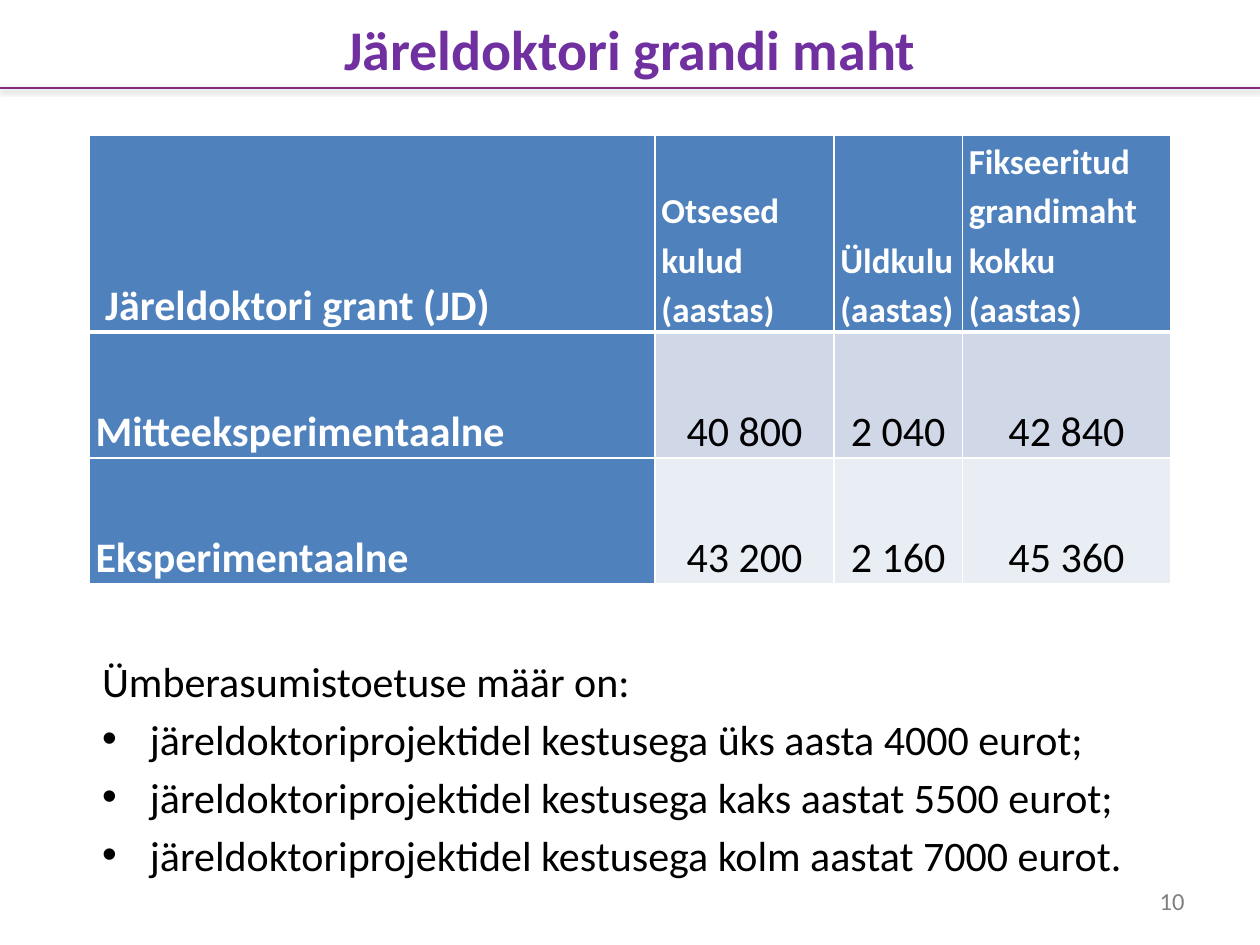
import pptx
import pptx.util
import pptx.dml.color
import pptx.enum.text
import pptx.enum.shapes
import pptx.oxml
import pptx.oxml.ns
from lxml import etree

Inches = pptx.util.Inches
Pt = pptx.util.Pt
Align = pptx.enum.text.PP_ALIGN
Anchor = pptx.enum.text.MSO_ANCHOR
qn = pptx.oxml.ns.qn

THEME = {
    "font": "Calibri",
    "title": "7030A0", "rule": "832B7C", "head": "4F81BD",
    "bands": ["D0D8E8", "E9EDF4"],
    "white": "FFFFFF", "black": "000000", "gray": "808080",
    "big": 32, "body": 24, "label": 20, "small": 14,
}

TITLE = "Järeldoktori grandi maht"
HEADS = [" Järeldoktori grant (JD)", "Otsesed kulud (aastas)",
         "Üldkulu (aastas)", "Fikseeritud grandimaht kokku (aastas)"]
ROWS = [
    ["Mitteeksperimentaalne", "40 800", "2 040", "42 840"],
    ["Eksperimentaalne", "43 200", "2 160", "45 360"],
]
WIDTHS = [4.49, 1.42, 1.02, 1.65]
HEIGHTS = [1.5, 1, 1]
LEAD = "Ümberasumistoetuse määr on:"
ITEMS = [
    "järeldoktoriprojektidel kestusega üks aasta 4000 eurot;",
    "järeldoktoriprojektidel kestusega kaks aastat 5500 eurot;",
    "järeldoktoriprojektidel kestusega kolm aastat 7000 eurot.",
]
PAGE = "10"
LEFT = 0.71
INDENT = 0.38


def color(name):
    return pptx.dml.color.RGBColor.from_string(THEME.get(name, name))


def write(para, text, size="body", ink="black", bold=False,
          align=Align.JUSTIFY, space=1.15, bullet=None):
    props = para._p.get_or_add_pPr()
    if bullet is not None:
        inset = Inches(INDENT) if bullet else 0
        props.set("marL", str(inset))
        props.set("indent", str(-inset))
        if bullet:
            etree.SubElement(props, qn("a:buFont")).set("typeface", "Arial")
            etree.SubElement(props, qn("a:buChar")).set("char", bullet)
        else:
            etree.SubElement(props, qn("a:buNone"))
    para.alignment = align
    para.line_spacing = space
    para.space_before = Pt(0)
    run = para.add_run()
    run.text = text
    run.font.name = THEME["font"]
    run.font.size = Pt(THEME[size])
    run.font.bold = bold
    run.font.color.rgb = color(ink)


def place(shape, left, top, width, height):
    shape.left, shape.top = Inches(left), Inches(top)
    shape.width, shape.height = Inches(width), Inches(height)


def border(cell, **points):
    props = cell._tc.get_or_add_tcPr()
    for side in "LRTB":
        line = etree.SubElement(props, qn("a:ln" + side))
        line.set("w", str(Pt(points.get(side, 1))))
        fill = etree.SubElement(line, qn("a:solidFill"))
        etree.SubElement(fill, qn("a:srgbClr")).set("val", THEME["white"])


def rule(slide):
    line = slide.shapes.add_connector(
        pptx.enum.shapes.MSO_CONNECTOR.STRAIGHT,
        0, Inches(0.7), Inches(10), Inches(0.7))
    line.line.color.rgb = color("rule")
    line.line.width = Pt(1)
    effects = etree.SubElement(line._element.spPr, qn("a:effectLst"))
    shade = etree.SubElement(effects, qn("a:outerShdw"), blurRad=str(Pt(3.1)),
                             dist=str(Pt(1)), dir="5400000", rotWithShape="0")
    tint = etree.SubElement(shade, qn("a:srgbClr"), val=THEME["black"])
    etree.SubElement(tint, qn("a:alpha"), val="25000")


def grid(slide):
    table = slide.shapes.add_table(
        len(HEIGHTS), len(WIDTHS), Inches(LEFT), Inches(1.07),
        Inches(sum(WIDTHS)), Inches(sum(HEIGHTS))).table
    for col, width in zip(table.columns, WIDTHS):
        col.width = Inches(width)
    for row, height in zip(table.rows, HEIGHTS):
        row.height = Inches(height)
    for r, texts in enumerate([HEADS] + ROWS):
        for c, text in enumerate(texts):
            cell = table.cell(r, c)
            head = r == 0 or c == 0
            cell.vertical_anchor = Anchor.BOTTOM
            cell.margin_left = cell.margin_right = Inches(0.05)
            cell.margin_top = cell.margin_bottom = 0
            border(cell, B=3 if r == 0 else 1, T=3 if r == 1 else 1)
            cell.fill.solid()
            cell.fill.fore_color.rgb = color(
                "head" if head else THEME["bands"][r - 1])
            write(cell.text_frame.paragraphs[0], text,
                  size="label" if r == 0 and c else "body",
                  ink="white" if head else "black", bold=head,
                  align=Align.JUSTIFY if head else Align.CENTER)


def main():
    deck = pptx.Presentation()
    deck.slide_width, deck.slide_height = Inches(10), Inches(7.5)
    slide = deck.slides.add_slide(deck.slide_layouts[1])
    rule(slide)

    title = slide.shapes.title
    place(title, 0.5, 0, 9, 0.76)
    title.text_frame.auto_size = pptx.enum.text.MSO_AUTO_SIZE.NONE
    title.text_frame.vertical_anchor = Anchor.MIDDLE
    write(title.text_frame.paragraphs[0], TITLE, size="big", ink="title",
          bold=True, align=Align.CENTER, space=1)

    grid(slide)

    body = slide.placeholders[1]
    place(body, LEFT, 5.09, sum(WIDTHS), 1.96)
    frame = body.text_frame
    frame.auto_size = pptx.enum.text.MSO_AUTO_SIZE.NONE
    write(frame.paragraphs[0], LEAD, bullet="")
    for item in ITEMS:
        write(frame.add_paragraph(), item, bullet="•")

    page = slide.shapes.add_textbox(0, 0, 0, 0)
    place(page, 7.17, 6.95, 2.33, 0.4)
    page.text_frame.word_wrap = True
    page.text_frame.vertical_anchor = Anchor.MIDDLE
    write(page.text_frame.paragraphs[0], PAGE, size="small", ink="gray",
          align=Align.RIGHT, space=1)

    deck.save("out.pptx")


if __name__ == "__main__":
    main()
